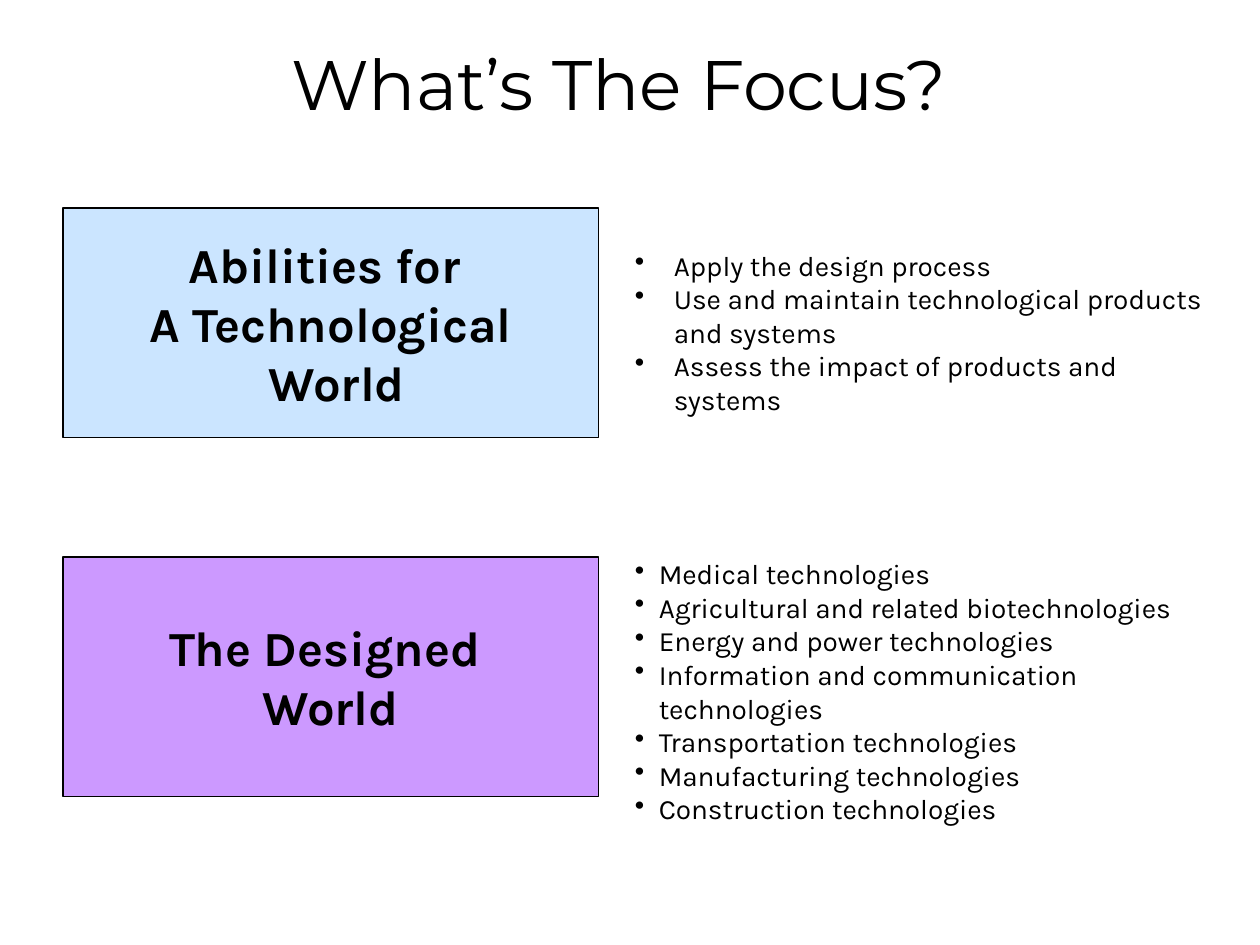
"""Build the "What's The Focus?" slide with two topic boxes and their bullet lists."""
from lxml import etree
from pptx import Presentation
from pptx.dml.color import RGBColor
from pptx.enum import shapes, text
from pptx.oxml import ns
from pptx.util import Inches, Pt

BLACK = RGBColor(0x00, 0x00, 0x00)
BLUE = RGBColor(0x99, 0xCC, 0xFF)
PURPLE = RGBColor(0xCC, 0x99, 0xFF)


def add_run(p, words, size, font, bold=False):
    r = p.add_run()
    r.text = words
    r.font.size = Pt(size)
    r.font.name = font
    r.font.bold = bold
    r.font.color.rgb = BLACK


def add_bullet(p, indent):
    pPr = p._p.get_or_add_pPr()
    pPr.set("marL", str(Inches(indent)))
    pPr.set("indent", str(-Inches(indent)))
    etree.SubElement(pPr, ns.qn("a:buChar")).set("char", "•")


topics = [
    (1.65, 1.82, BLUE, 50, ["Abilities for ", "A Technological", " World"],
     1.92, 4.79, 1.45, 0.31,
     ["Apply the design process",
      "Use and maintain technological products and systems",
      "Assess the impact of products and systems"]),
    (4.42, 1.9, PURPLE, 100, ["The Designed ", "World"],
     4.37, 4.86, 1.99, 0.19,
     ["Medical technologies",
      "Agricultural and related biotechnologies",
      "Energy and power technologies",
      "Information and communication technologies",
      "Transportation technologies",
      "Manufacturing technologies",
      "Construction technologies"]),
]

prs = Presentation()
prs.slide_width, prs.slide_height = Inches(10), Inches(7.5)
s = prs.slides.add_slide(prs.slide_layouts[5])

title = s.shapes.title
title.left, title.top = Inches(0.65), Inches(0.12)
title.width, title.height = Inches(8.52), Inches(0.92)
tf = title.text_frame
tf.auto_size = text.MSO_AUTO_SIZE.NONE
tf.vertical_anchor = text.MSO_ANCHOR.BOTTOM
tf.paragraphs[0].alignment = text.PP_ALIGN.CENTER
add_run(tf.paragraphs[0], "What’s The Focus?", 40, "Montserrat")

for top, height, color, opacity, lines, list_top, list_width, list_height, indent, items in topics:
    sp = s.shapes.add_shape(shapes.MSO_SHAPE.RECTANGLE, Inches(0.5), Inches(top),
                            Inches(4.25), Inches(height))
    sp.shadow.inherit = False
    sp.fill.solid()
    sp.fill.fore_color.rgb = color
    if opacity < 100:
        clr = sp._element.spPr.find(ns.qn("a:solidFill"))[0]
        etree.SubElement(clr, ns.qn("a:alpha")).set("val", str(opacity * 1000))
    sp.line.color.rgb = BLACK
    sp.line.width = Pt(0.75)
    tf = sp.text_frame
    tf.word_wrap = False
    tf.vertical_anchor = text.MSO_ANCHOR.MIDDLE
    for i, line in enumerate(lines):
        p = tf.add_paragraph() if i else tf.paragraphs[0]
        p.alignment = text.PP_ALIGN.CENTER
        add_run(p, line, 28, "Karla", bold=True)

    tb = s.shapes.add_textbox(Inches(4.94), Inches(list_top), Inches(list_width), Inches(list_height))
    tf = tb.text_frame
    tf.word_wrap = True
    for i, item in enumerate(items):
        p = tf.add_paragraph() if i else tf.paragraphs[0]
        add_bullet(p, indent)
        add_run(p, item, 16, "Karla")

prs.save("out.pptx")
